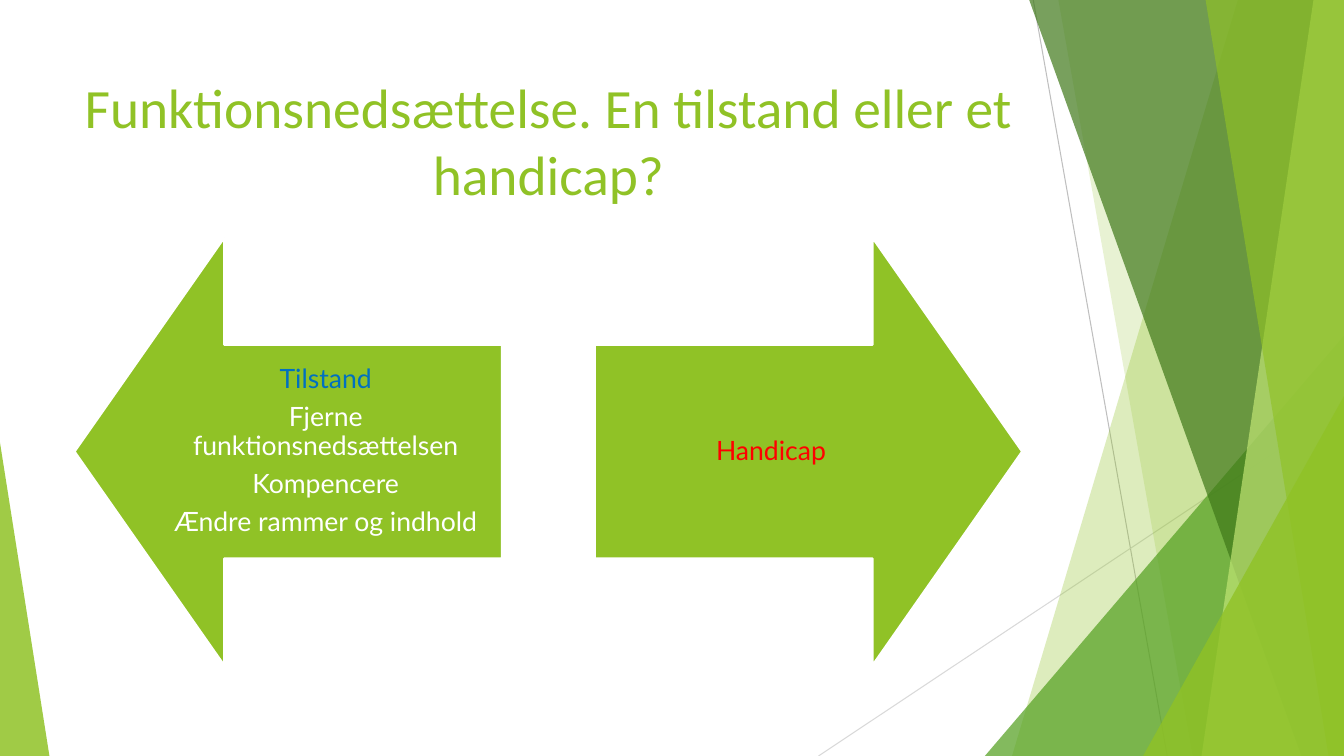
from lxml.etree import SubElement
from pptx import Presentation
from pptx.dml.color import RGBColor
from pptx.enum.shapes import MSO_CONNECTOR, MSO_SHAPE
from pptx.enum.text import MSO_ANCHOR, PP_ALIGN
from pptx.oxml.ns import qn
from pptx.util import Inches, Pt

W, H = Inches(13.33), Inches(7.5)
LIME = RGBColor(0x90, 0xC2, 0x26)
PALE_LIME = RGBColor(0xC0, 0xE4, 0x74)
GREEN = RGBColor(0x54, 0xA0, 0x21)
DARK_GREEN = RGBColor(0x3F, 0x78, 0x19)
GREY = RGBColor(0xBF, 0xBF, 0xBF)
LIGHT_GREY = RGBColor(0xD9, 0xD9, 0xD9)
WHITE = RGBColor(0xFF, 0xFF, 0xFF)
BLUE = RGBColor(0x00, 0x70, 0xC0)
RED = RGBColor(0xFF, 0x00, 0x00)


def across(percent):
    return round(W * percent / 100)


def down(percent):
    return round(H * percent / 100)


CONTENT_LEFT, CONTENT_WIDTH = across(5.55), across(70.5)
ARROW_TOP, ARROW_SIDE = down(31.47), across(31.8)
HEAD = 0.35


def paint(s, color, opacity=100):
    s.shadow.inherit = False
    s.line.fill.background()
    s.fill.solid()
    s.fill.fore_color.rgb = color
    if opacity < 100:
        rgb = s.fill._xPr.find(qn("a:solidFill"))[0]
        SubElement(rgb, qn("a:alpha"), val=str(opacity * 1000))


def add_thin_line(slide, start, end, color):
    (x1, y1), (x2, y2) = start, end
    s = slide.shapes.add_connector(MSO_CONNECTOR.STRAIGHT, across(x1), down(y1),
                                   across(x2), down(y2))
    s.line.color.rgb = color
    s.line.width = Pt(0.75)
    SubElement(s._element.spPr, qn("a:effectLst"))


def add_facet(slide, top_x, bottom_x, color, opacity):
    """Full-height panel from a slanted left edge to the slide's right edge."""
    builder = slide.shapes.build_freeform(across(top_x), 0)
    builder.add_line_segments([(W, 0), (W, H), (across(bottom_x), H)], close=True)
    paint(builder.convert_to_shape(), color, opacity)


def add_corner(slide, left, top, width, apex, color, opacity):
    """Triangle standing on the slide's bottom edge."""
    s = slide.shapes.add_shape(MSO_SHAPE.ISOSCELES_TRIANGLE, across(left), down(top),
                               across(width), H - down(top))
    s.adjustments[0] = apex
    paint(s, color, opacity)


def add_backdrop(slide):
    add_thin_line(slide, (76.88, 0), (86.85, 100), GREY)
    add_thin_line(slide, (100, 53.73), (60.9, 100), LIGHT_GREY)
    add_facet(slide, 92.1, 75.3, LIME, 30)
    add_facet(slide, 78.75, 88.73, LIME, 20)
    add_corner(slide, 73.28, 44.4, 26.72, 1, GREEN, 72)
    add_facet(slide, 76.58, 96.83, DARK_GREEN, 70)
    add_facet(slide, 97.73, 89.4, PALE_LIME, 70)
    add_facet(slide, 89.7, 98.85, LIME, 65)
    add_corner(slide, 85.05, 52.4, 14.95, 1, LIME, 80)
    add_corner(slide, 0, 58.53, 3.68, 0, LIME, 85)


def add_text(slide, box, lines, font, size, inset=None):
    """Centred text box; lines holds (text, color) pairs."""
    tf = slide.shapes.add_textbox(*box).text_frame
    tf.word_wrap = True
    tf.vertical_anchor = MSO_ANCHOR.MIDDLE
    if inset is not None:
        tf.margin_left = tf.margin_right = tf.margin_top = tf.margin_bottom = inset
    tf.text = "\n".join(text for text, _ in lines)
    for p, (_, color) in zip(tf.paragraphs, lines):
        p.alignment = PP_ALIGN.CENTER
        r = p.runs[0]
        r.font.name = font
        r.font.size = Pt(size)
        r.font.color.rgb = color
    return tf


def add_arrow(slide, left, rotation, text_shift, lines):
    """Block arrow with its text; text_shift is a share of the arrow's side."""
    s = slide.shapes.add_shape(MSO_SHAPE.UP_ARROW, left, ARROW_TOP, ARROW_SIDE, ARROW_SIDE)
    s.rotation = rotation
    s.adjustments[0], s.adjustments[1] = 0.5, HEAD
    paint(s, LIME)
    s.line.color.rgb = WHITE
    s.line.width = Pt(1.5)
    box = (left + round(ARROW_SIDE * text_shift), ARROW_TOP + ARROW_SIDE // 4,
           round(ARROW_SIDE * (1 - HEAD / 2)), ARROW_SIDE // 2)
    tf = add_text(slide, box, lines, "Lato", 19, Inches(0.15))
    for p in tf.paragraphs:
        p.line_spacing = 0.9
        p.space_after = Pt(6.65)


def main():
    prs = Presentation()
    prs.slide_width, prs.slide_height = W, H
    slide = prs.slides.add_slide(prs.slide_layouts[6])
    add_backdrop(slide)
    add_text(slide, (CONTENT_LEFT, down(8.93), CONTENT_WIDTH, down(19.2)),
             [("Funktionsnedsættelse. En tilstand eller et handicap?", LIME)],
             "Calibri", 39.6)
    add_arrow(slide, CONTENT_LEFT, 270, HEAD / 2, [
        ("Tilstand", BLUE),
        ("Fjerne funktionsnedsættelsen", WHITE),
        ("Kompencere", WHITE),
        ("Ændre rammer og indhold", WHITE),
    ])
    add_arrow(slide, CONTENT_LEFT + CONTENT_WIDTH - ARROW_SIDE, 90, 0,
              [("Handicap", RED)])
    prs.save("out.pptx")


if __name__ == "__main__":
    main()
